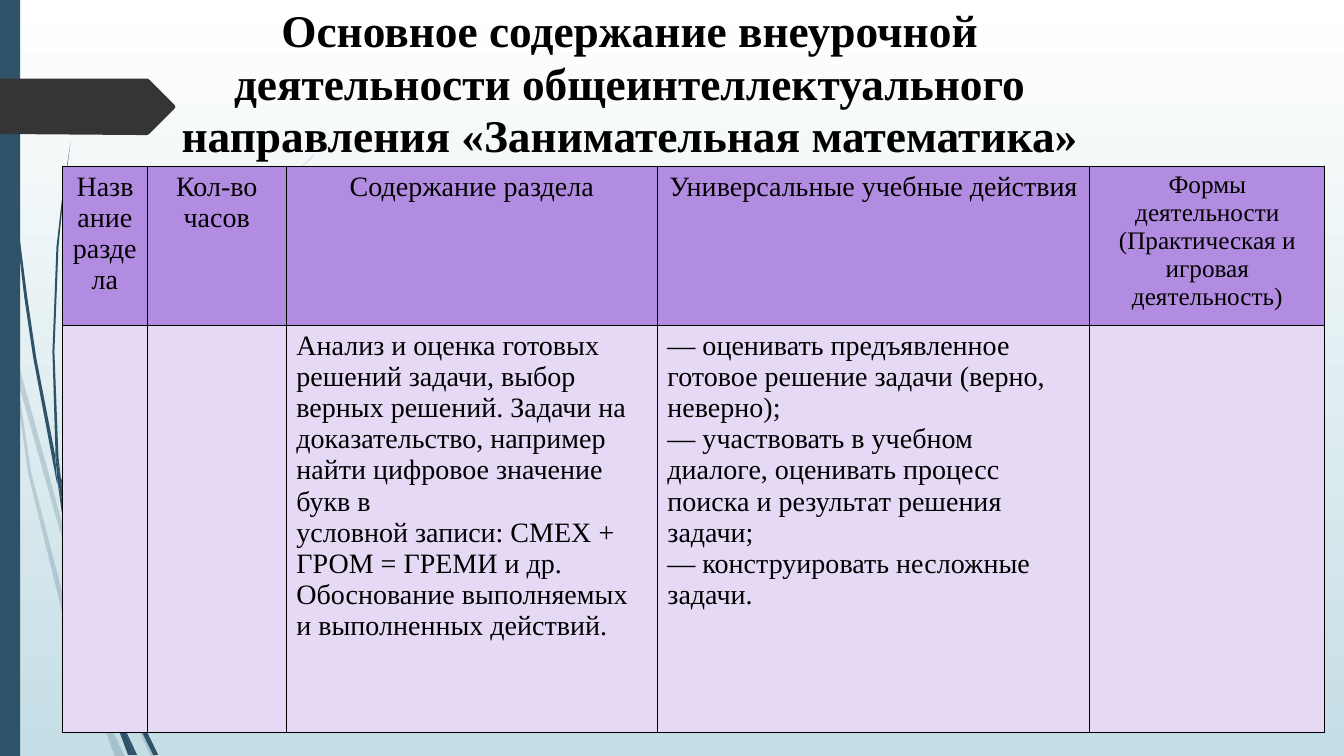
import pptx
import pptx.util
import pptx.dml.color
import pptx.enum.shapes
import pptx.enum.text
import pptx.oxml
import pptx.oxml.ns
from pptx.util import Inches

RGBColor = pptx.dml.color.RGBColor
PP_ALIGN = pptx.enum.text.PP_ALIGN
WHITE = RGBColor(0xFF, 0xFF, 0xFF)
MIST = RGBColor(0xC5, 0xDE, 0xE5)
TEAL = RGBColor(0x2E, 0x53, 0x69)
CHARCOAL = RGBColor(0x35, 0x35, 0x35)
BLACK = RGBColor(0, 0, 0)
VIOLET = RGBColor(0xB2, 0x8C, 0xE0)
LILAC = RGBColor(0xE5, 0xD9, 0xF5)
FONT = "Times New Roman"

PALE_STEMS = [
    [(0.11, 3.5), (0.09, 3.22), (0, 2.82), (0, 2.99), (0.1, 3.44)],
    [(0.58, 5.22), (0.84, 5.99), (0.85, 5.86), (0.62, 5.2), (0.14, 3.45), (0.17, 3.76)],
    [(0.92, 6.07), (0.88, 5.96), (0.88, 6.1), (1.23, 6.94), (1.5, 7.51), (1.55, 7.51),
     (1.27, 6.92)],
    [(1.19, 7.51), (1.24, 7.51), (1.05, 7.11)],
    [(0.93, 6.83), (0.7, 6.19), (0.31, 4.69), (0.17, 3.76), (0.11, 3.5), (0.28, 4.7),
     (0.65, 6.21), (0.92, 6.93), (1.01, 7.14), (0.99, 7.07)],
    [(0.84, 5.99), (0.87, 6.46), (0.93, 6.83), (0.96, 6.92), (1.05, 7.11), (1.03, 7.06),
     (0.91, 6.46), (0.88, 6.1), (0.88, 6.08)],
    [(0.88, 5.84), (1.1, 4.62), (1.6, 3.49), (2.29, 2.45), (2.68, 1.98), (2.9, 1.75),
     (3.12, 1.54), (3.12, 1.53), (2.89, 1.75), (2.68, 1.97), (2.28, 2.44), (1.58, 3.48),
     (1.07, 4.61), (0.85, 5.84), (0.85, 5.86), (0.88, 5.96)],
    [(1.01, 7.14), (1.14, 7.51), (1.19, 7.51)],
    [(0.88, 6.08), (0.88, 6.1), (0.88, 5.96), (0.85, 5.86), (0.84, 5.99)],
    [(0.96, 6.92), (0.93, 6.83), (0.99, 7.07), (1.01, 7.14), (1.19, 7.51), (1.05, 7.11)],
]
DARK_STEMS = [
    [(0.07, 1.1), (0.17, 2.33), (0.24, 2.94), (0.33, 3.55), (0.56, 4.77), (0.57, 4.81),
     (0.55, 4.57), (0.55, 4.53), (0.36, 3.55), (0.27, 2.94), (0.19, 2.32), (0.08, 1.09),
     (0.05, 0.48), (0.04, 0), (0.03, 0), (0.04, 0.48)],
    [(0.88, 5.92), (1.06, 6.45), (1.06, 6.31), (0.93, 5.9), (0.6, 4.72), (0.64, 5.05)],
    [(1.13, 6.49), (1.1, 6.41), (1.11, 6.56), (1.32, 7.08), (1.52, 7.49), (1.57, 7.49),
     (1.36, 7.06)],
    [(1.1, 6.91), (0.98, 6.57), (0.72, 5.56), (0.64, 5.05), (0.57, 4.77), (0.68, 5.57),
     (0.93, 6.59), (1.11, 7.08), (1.17, 7.22), (1.16, 7.17)],
    [(0.6, 4.72), (0.58, 4.53), (0.54, 3.49), (0.58, 2.45), (0.63, 1.93), (0.7, 1.41),
     (0.62, 1.93), (0.56, 2.45), (0.52, 3.49), (0.55, 4.49)],
    [(1.33, 7.49), (1.36, 7.49), (1.22, 7.19)],
    [(0.57, 4.77), (0.64, 5.05), (0.6, 4.72), (0.55, 4.49), (0.55, 4.53)],
    [(1.11, 6.33), (1.25, 5.52), (1.58, 4.76), (2.05, 4.06), (2.31, 3.74), (2.45, 3.59),
     (2.61, 3.44), (2.45, 3.58), (2.31, 3.73), (2.04, 4.05), (1.56, 4.74), (1.22, 5.51),
     (1.06, 6.31), (1.1, 6.41)],
    [(1.17, 7.22), (1.27, 7.49), (1.31, 7.49)],
    [(1.06, 6.45), (1.1, 6.91), (1.16, 7.06), (1.22, 7.19), (1.21, 7.16), (1.11, 6.56),
     (1.09, 6.51)],
    [(1.06, 6.45), (1.09, 6.51), (1.11, 6.56), (1.1, 6.41), (1.06, 6.31)],
    [(1.16, 7.06), (1.1, 6.91), (1.16, 7.17), (1.17, 7.22), (1.3, 7.49), (1.33, 7.49),
     (1.22, 7.19)],
]
POINTER = [(0, 0), (1.46, 0), (1.48, 0.01), (1.73, 0.26), (1.74, 0.28), (1.73, 0.3),
           (1.48, 0.55), (1.46, 0.56), (1.36, 0.56), (0, 0.55)]

TITLE = ("Основное содержание внеурочной деятельности общеинтеллектуального "
         "направления «Занимательная математика»")
COLUMNS = [0.84, 1.38, 3.68, 4.29, 2.33]
ROWS = [1.58, 4.04]
HEADER = [
    ["Название раздела"],
    ["Кол-во", "часов"],
    ["Содержание раздела"],
    ["Универсальные учебные действия"],
    ["Формы деятельности (Практическая и игровая деятельность)"],
]
BODY = [
    [],
    [],
    ["Анализ и оценка готовых решений задачи, выбор верных решений. Задачи на "
     "доказательство, например найти цифровое значение букв в",
     "условной записи: СМЕХ + ГРОМ = ГРЕМИ и др. Обоснование выполняемых и "
     "выполненных действий."],
    ["— оценивать предъявленное готовое решение задачи (верно, неверно);",
     "— участвовать в учебном диалоге, оценивать процесс поиска и результат решения задачи;",
     "— конструировать несложные задачи."],
    [],
]


def paint(sp, color, opacity=100):
    sp.shadow.inherit = False
    sp.fill.solid()
    sp.fill.fore_color.rgb = color
    sp.line.fill.background()
    if opacity < 100:
        clr = sp.fill._xPr.find(".//" + pptx.oxml.ns.qn("a:srgbClr"))
        clr.append(pptx.oxml.parse_xml(
            f'<a:alpha {pptx.oxml.ns.nsdecls("a")} val="{opacity * 1000}"/>'))


def add_outline(shapes, left, top, points, color, opacity=100):
    corners = [(Inches(left + x), Inches(top + y)) for x, y in points]
    builder = shapes.build_freeform(*corners[0])
    builder.add_line_segments(corners[1:], close=True)
    paint(builder.convert_to_shape(), color, opacity)


def add_stems(s, left, top, stems, opacity):
    group = s.shapes.add_group_shape()
    for points in stems:
        add_outline(group.shapes, left, top, points, TEAL, opacity)


def add_backdrop(s, left, top, height):
    fill = s.background.fill
    fill.gradient()
    fill.gradient_angle = 270
    for stop, color in zip(fill.gradient_stops, (WHITE, MIST)):
        stop.color.rgb = color
    add_stems(s, left, top, PALE_STEMS, 20)
    add_stems(s, left, top, DARK_STEMS, 100)
    bar = s.shapes.add_shape(pptx.enum.shapes.MSO_SHAPE.RECTANGLE, Inches(left),
                             Inches(top), Inches(0.2), Inches(height))
    paint(bar, TEAL)
    add_outline(s.shapes, left, top + 0.78, POINTER, CHARCOAL)


def add_run(p, text, size, bold=False):
    r = p.add_run()
    r.text = text
    r.font.name = FONT
    r.font.size = pptx.util.Pt(size)
    r.font.bold = bold
    r.font.color.rgb = BLACK


def add_title(s, left, top, width, height):
    title = s.shapes.title
    title.left, title.top = Inches(left), Inches(top)
    title.width, title.height = Inches(width), Inches(height)
    s.shapes._spTree.append(title._element)
    tf = title.text_frame
    tf.word_wrap = True
    tf.auto_size = pptx.enum.text.MSO_AUTO_SIZE.NONE
    tf.vertical_anchor = pptx.enum.text.MSO_ANCHOR.TOP
    p = tf.paragraphs[0]
    p.alignment = PP_ALIGN.CENTER
    p.line_spacing = 0.97
    add_run(p, TITLE, 32.4, True)


def add_borders(cell):
    tcPr = cell._tc.get_or_add_tcPr()
    for i, side in enumerate(("lnL", "lnR", "lnT", "lnB")):
        tcPr.insert(i, pptx.oxml.parse_xml(
            f'<a:{side} {pptx.oxml.ns.nsdecls("a")} w="12700"><a:solidFill>'
            f'<a:srgbClr val="{BLACK}"/></a:solidFill></a:{side}>'))


def fill_cell(cell, lines, color, align, size):
    cell.fill.solid()
    cell.fill.fore_color.rgb = color
    add_borders(cell)
    tf = cell.text_frame
    for i, line in enumerate(lines):
        p = tf.add_paragraph() if i else tf.paragraphs[0]
        p.alignment = align
        add_run(p, line, size)


def add_plan(s, left, top):
    table = s.shapes.add_table(len(ROWS), len(COLUMNS), Inches(left), Inches(top),
                               Inches(sum(COLUMNS)), Inches(sum(ROWS))).table
    for row, height in zip(table.rows, ROWS):
        row.height = Inches(height)
    for i, width in enumerate(COLUMNS):
        table.columns[i].width = Inches(width)
        header_size = 18 if i == len(COLUMNS) - 1 else 20
        fill_cell(table.cell(0, i), HEADER[i], VIOLET, PP_ALIGN.CENTER, header_size)
        fill_cell(table.cell(1, i), BODY[i], LILAC, PP_ALIGN.LEFT, 20)


def main():
    prs = pptx.Presentation()
    prs.slide_width, prs.slide_height = Inches(13.33), Inches(7.5)
    s = prs.slides.add_slide(prs.slide_layouts[5])
    add_backdrop(s, 0, 0, 7.5)
    add_title(s, 1.37, 0, 9.75, 1.4)
    add_plan(s, 0.62, 1.65)
    prs.save("out.pptx")


if __name__ == "__main__":
    main()
